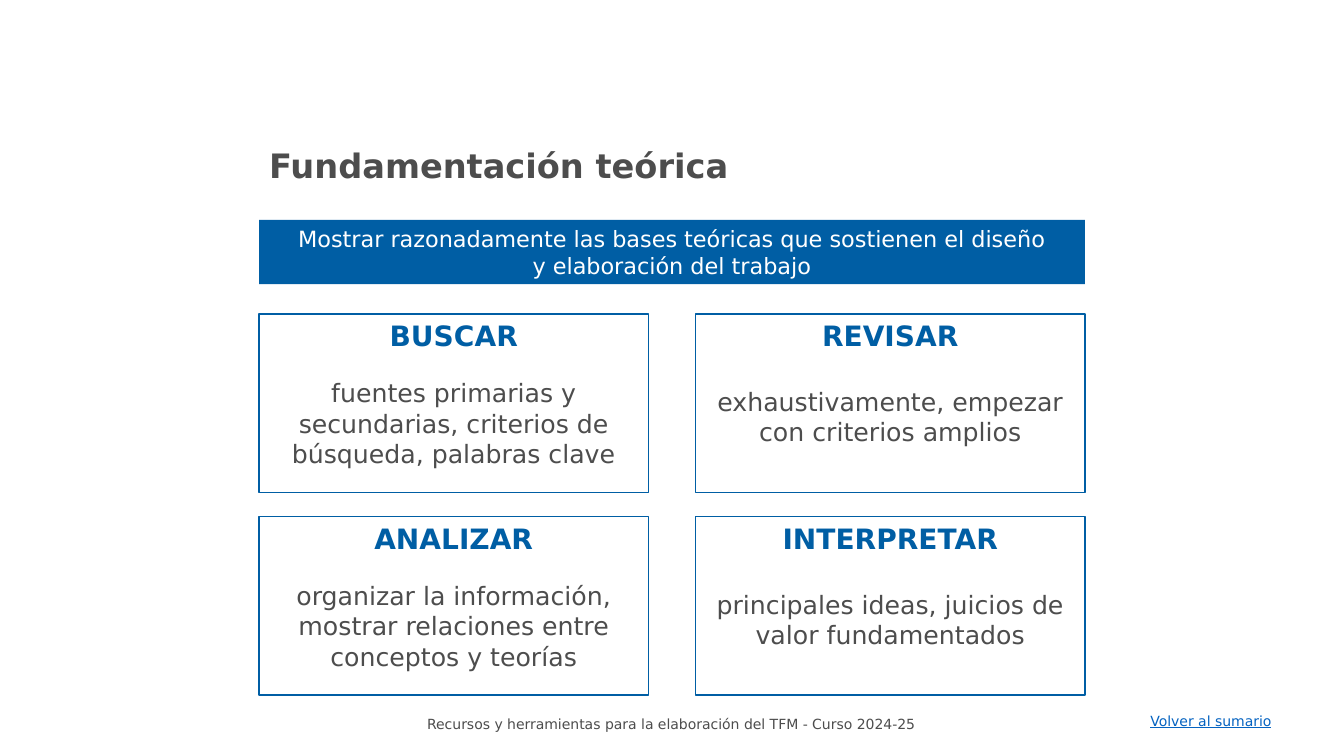
"""Build the slide on the theoretical foundation of a final project."""
import dataclasses
import typing

import pptx
import pptx.dml.color
import pptx.enum.shapes
import pptx.enum.text
import pptx.util

Align = pptx.enum.text.PP_ALIGN
Anchor = pptx.enum.text.MSO_ANCHOR


@dataclasses.dataclass(frozen=True)
class Theme:
    font: str = "DejaVu Sans"
    blue: str = "005EA4"
    gray: str = "4D4D4D"
    white: str = "FFFFFF"
    link: str = "0563C1"
    title: int = 24
    head: int = 20
    body: int = 18
    lead: int = 16
    small: int = 10


@dataclasses.dataclass(frozen=True)
class Box:
    left: float
    top: float
    width: float
    height: float


@dataclasses.dataclass(frozen=True)
class Line:
    text: str
    size: int
    color: str
    align: typing.Any = Align.CENTER
    after: int = 0
    bold: bool = False
    under: bool = False


@dataclasses.dataclass(frozen=True)
class Card:
    head: str
    body: str
    after: int


THEME = Theme()
WIDTH = pptx.util.Inches(13.33)
HEIGHT = pptx.util.Inches(7.5)
LEFT, TOP = 19.28, 41.53
STEP_X, STEP_Y = 32.48, 26.83
CARD_W, CARD_H = 28.96, 23.6
CARDS = (
    Card("BUSCAR", "fuentes primarias y secundarias, criterios de búsqueda, palabras clave", 18),
    Card("REVISAR", "exhaustivamente, empezar con criterios amplios", 24),
    Card("ANALIZAR", "organizar la información, mostrar relaciones entre conceptos y teorías", 18),
    Card("INTERPRETAR", "principales ideas, juicios de valor fundamentados", 24),
)


def rgb(color: str) -> pptx.dml.color.RGBColor:
    return pptx.dml.color.RGBColor.from_string(color)


def apply(target: typing.Any, style: dict[str, typing.Any]) -> None:
    for name, value in style.items():
        setattr(target, name, value)


def place(box: Box) -> dict[str, int]:
    return {
        "left": round(WIDTH * box.left / 100),
        "top": round(HEIGHT * box.top / 100),
        "width": round(WIDTH * box.width / 100),
        "height": round(HEIGHT * box.height / 100),
    }


def write(shape: typing.Any, lines: list[Line], anchor: typing.Any, wrap: bool = True) -> None:
    frame = shape.text_frame
    apply(frame, {
        "word_wrap": wrap,
        "auto_size": pptx.enum.text.MSO_AUTO_SIZE.NONE,
        "vertical_anchor": anchor,
    })
    for index, line in enumerate(lines):
        para = frame.paragraphs[0] if index == 0 else frame.add_paragraph()
        apply(para, {"alignment": line.align, "space_after": pptx.util.Pt(line.after)})
        run = para.add_run()
        run.text = line.text
        apply(run.font, {
            "name": THEME.font,
            "size": pptx.util.Pt(line.size),
            "bold": line.bold,
            "underline": line.under,
        })
        run.font.color.rgb = rgb(line.color)


def panel(slide: typing.Any, box: Box, fill: str, edge: bool) -> typing.Any:
    kind = pptx.enum.shapes.MSO_SHAPE.RECTANGLE
    shape = slide.shapes.add_shape(kind, **place(box))
    shape.shadow.inherit = False
    shape.fill.solid()
    shape.fill.fore_color.rgb = rgb(fill)
    if edge:
        shape.line.color.rgb = rgb(THEME.blue)
        shape.line.width = pptx.util.Pt(1)
    else:
        shape.line.fill.background()
    return shape


def label(slide: typing.Any, box: Box, line: Line, wrap: bool) -> None:
    shape = slide.shapes.add_textbox(**place(box))
    write(shape, [line], Anchor.MIDDLE, wrap)


def main() -> None:
    deck = pptx.Presentation()
    apply(deck, {"slide_width": WIDTH, "slide_height": HEIGHT})
    slide = deck.slides.add_slide(deck.slide_layouts[5])

    title = slide.shapes.title
    apply(title, place(Box(LEFT, 18.53, 62.64, 6.67)))
    write(title, [Line("Fundamentación teórica", THEME.title, THEME.gray,
                       Align.LEFT, bold=True)], Anchor.TOP)

    banner = panel(slide, Box(LEFT, 29.07, STEP_X + CARD_W, 8.53), THEME.blue, False)
    goals = ("Mostrar razonadamente las bases teóricas que sostienen el diseño",
             "y elaboración del trabajo")
    write(banner, [Line(goal, THEME.lead, THEME.white) for goal in goals], Anchor.MIDDLE)

    for index, card in enumerate(CARDS):
        row, col = divmod(index, 2)
        box = Box(LEFT + col * STEP_X, TOP + row * STEP_Y, CARD_W, CARD_H)
        write(panel(slide, box, THEME.white, True), [
            Line(card.head, THEME.head, THEME.blue, after=card.after, bold=True),
            Line(card.body, THEME.body, THEME.gray),
        ], Anchor.TOP)

    label(slide, Box(20.11, 94, 59.64, 3.6),
          Line("Recursos y herramientas para la elaboración del TFM - Curso 2024-25",
               THEME.small, THEME.gray), True)
    label(slide, Box(84.85, 93.6, 10.8, 3.6),
          Line("Volver al sumario", THEME.small, THEME.link, Align.LEFT, under=True), False)
    deck.save("out.pptx")


if __name__ == "__main__":
    main()
